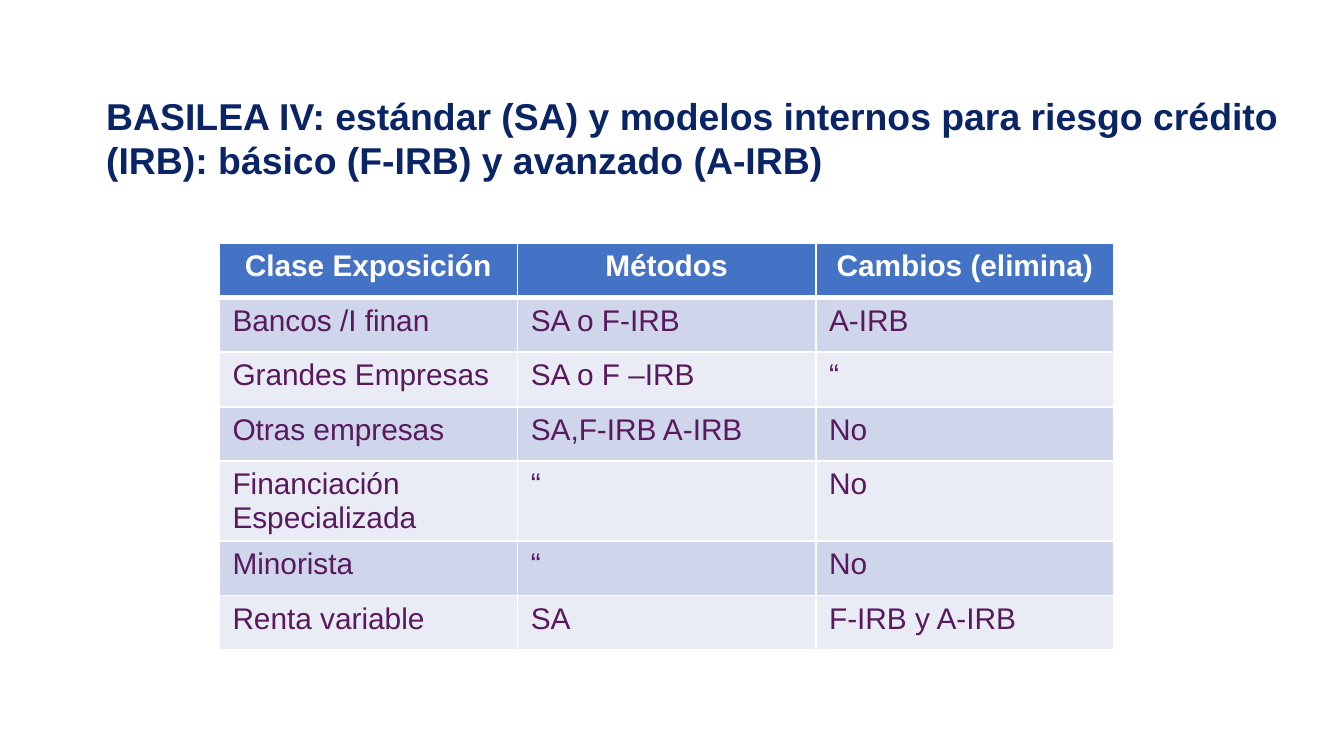
from lxml.etree import SubElement
from pptx import Presentation
from pptx.dml.color import RGBColor
from pptx.enum.text import MSO_ANCHOR, PP_ALIGN
from pptx.oxml.ns import qn
from pptx.util import Inches, Pt

COLORS = {
    "title": "092566",
    "header": "4472C4",
    "band_dark": "CFD5EA",
    "band_light": "E9EBF5",
    "body": "58195D",
    "white": "FFFFFF",
}
EXPOSURES = [
    ("Clase Exposición", "Métodos", "Cambios (elimina)"),
    ("Bancos /I finan", "SA o F-IRB", "A-IRB"),
    ("Grandes Empresas", "SA o F –IRB", "“"),
    ("Otras empresas", "SA,F-IRB A-IRB", "No"),
    ("Financiación Especializada", "“", "No"),
    ("Minorista", "“", "No"),
    ("Renta variable", "SA", "F-IRB y A-IRB"),
]
ROW_HEIGHT = Pt(29.2)


class SlideBuilder:
    font_name = "Arial"

    def __init__(self, slide):
        self.slide = slide

    def color(self, key):
        return RGBColor.from_string(COLORS[key])

    def style(self, paragraph, size, color, bold, align):
        paragraph.alignment = align
        font = paragraph.font
        font.name, font.size, font.bold = self.font_name, Pt(size), bold
        font.color.rgb = self.color(color)

    def title(self, text, left, top, width, height):
        title = self.slide.shapes.title
        title.left, title.top = Inches(left), Inches(top)
        title.width, title.height = Inches(width), Inches(height)
        frame = title.text_frame
        frame.text = text
        frame.word_wrap = True
        frame.vertical_anchor = MSO_ANCHOR.TOP
        self.style(frame.paragraphs[0], 20, "title", True, PP_ALIGN.LEFT)

    def borders(self, cell, bottom):
        properties = cell._tc.get_or_add_tcPr()
        sides = {"a:lnL": 1, "a:lnR": 1, "a:lnT": 1, "a:lnB": bottom}
        for position, (side, width) in enumerate(sides.items()):
            line = SubElement(properties, qn(side), w=str(Pt(width)))
            fill = SubElement(line, qn("a:solidFill"))
            SubElement(fill, qn("a:srgbClr"), val=COLORS["white"])
            properties.insert(position, line)

    def table(self, rows, row_height, left, top, width):
        table = self.slide.shapes.add_table(
            len(rows), len(rows[0]), Inches(left), Inches(top),
            Inches(width), row_height * len(rows),
        ).table
        for index, texts in enumerate(rows):
            header = index == 0
            band = "header" if header else "band_dark" if index % 2 else "band_light"
            for column, text in enumerate(texts):
                cell = table.cell(index, column)
                cell.text = text
                cell.fill.solid()
                cell.fill.fore_color.rgb = self.color(band)
                self.borders(cell, 3 if header else 1)
                self.style(
                    cell.text_frame.paragraphs[0], 16,
                    "white" if header else "body", header,
                    PP_ALIGN.CENTER if header else PP_ALIGN.LEFT,
                )


def main():
    presentation = Presentation()
    presentation.slide_width = Inches(10)
    presentation.slide_height = presentation.slide_width * 9 // 16
    builder = SlideBuilder(presentation.slides.add_slide(presentation.slide_layouts[5]))

    # Heading
    builder.title(
        "BASILEA IV: estándar (SA) y modelos internos para riesgo crédito "
        "(IRB): básico (F-IRB) y avanzado (A-IRB)",
        0.69, 0.64, 9.14, 0.77,
    )

    # Methods by exposure class
    builder.table(EXPOSURES, ROW_HEIGHT, 1.63, 1.81, 6.66)

    presentation.save("out.pptx")


if __name__ == "__main__":
    main()
